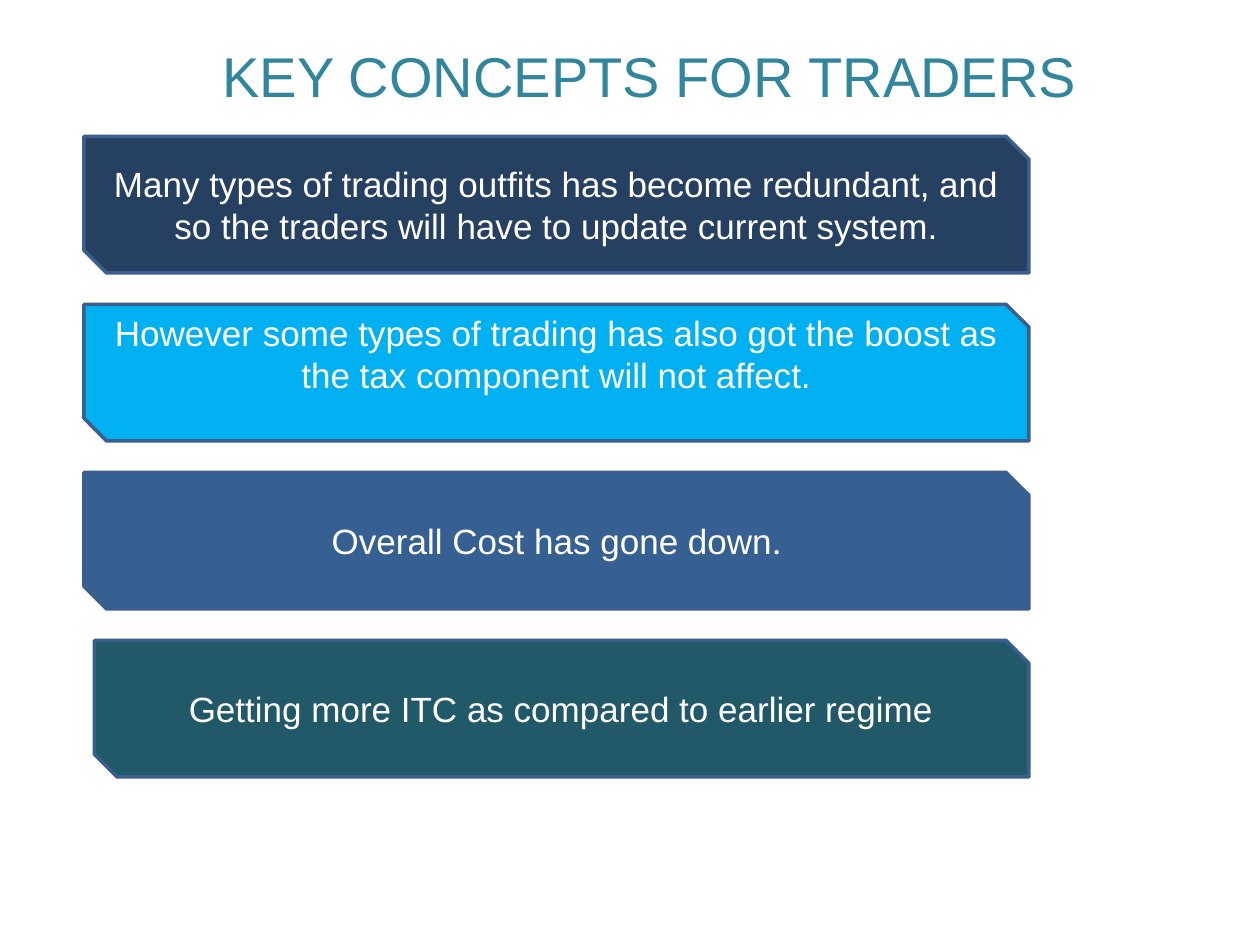
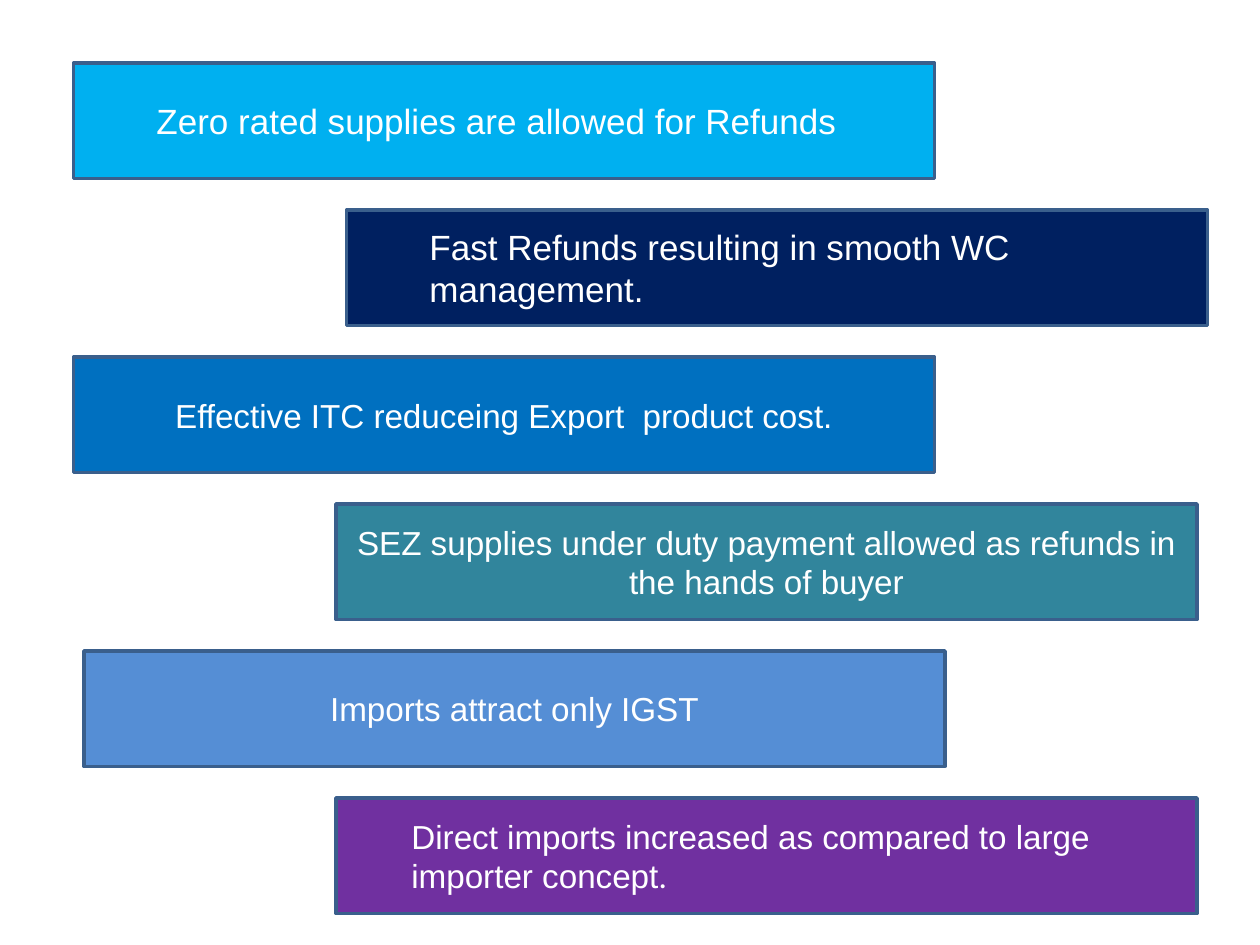
from pptx import Presentation
from pptx.dml.color import RGBColor as Rgb
from pptx.enum.shapes import MSO_SHAPE as Form
from pptx.enum.text import MSO_ANCHOR as Anchor, MSO_AUTO_SIZE as Fit, PP_ALIGN as Align
from pptx.util import Inches, Pt

HUES = {
    "white": "FFFFFF", "edge": "3A5F8C", "teal": "31859C",
    "dusk": "254061", "sky": "00B0F0", "steel": "376092", "pine": "215968",
    "navy": "002060", "blue": "0070C0", "pale": "558ED5", "plum": "7030A0",
}
COLS, ROWS = 120, 90


class Deck:
    """Holds the style and the current slide; lengths are grid cells."""

    def __init__(self):
        self.prs = Presentation()
        self.prs.slide_width, self.prs.slide_height = Inches(10), Inches(7.5)
        self.cell = self.prs.slide_width / COLS
        self.row = self.prs.slide_height / ROWS
        self.font = "Arial"

    def page(self):
        self.slide = self.prs.slides.add_slide(self.prs.slide_layouts[6])

    def place(self, left, top, wide, high):
        return (round(left * self.cell), round(top * self.row),
                round(wide * self.cell), round(high * self.row))

    def label(self, para, text, size, hue, dot=False):
        para.text = text
        if dot:
            para.add_run().text = "."
        for run in para.runs:
            run.font.name, run.font.size = self.font, Pt(size)
            run.font.color.rgb = Rgb.from_string(HUES[hue])
        if dot:
            para.runs[-1].font.name = "Calibri"

    def title(self, text, *spot):
        frame = self.slide.shapes.add_textbox(*self.place(*spot)).text_frame
        frame.word_wrap, frame.auto_size = True, Fit.SHAPE_TO_FIT_TEXT
        self.label(frame.paragraphs[0], text, 32, "teal")

    def bar(self, form, spot, hue, text, size=20, inset=None, lift=0, dot=False):
        """Draw a bar; inset (inches) left-aligns the text, lift raises it."""
        shape = self.slide.shapes.add_shape(form, *self.place(*spot))
        shape.shadow.inherit = False
        shape.fill.solid()
        shape.fill.fore_color.rgb = Rgb.from_string(HUES[hue])
        shape.line.color.rgb = Rgb.from_string(HUES["edge"])
        shape.line.width = Pt(2)
        frame = shape.text_frame
        frame.word_wrap, frame.vertical_anchor = True, Anchor.MIDDLE
        frame.margin_bottom = Inches(0.05 + lift)
        para = frame.paragraphs[0]
        self.label(para, text, size, "white", dot)
        if inset is None:
            para.alignment = Align.CENTER
        else:
            para.alignment = Align.LEFT
            props = para._p.get_or_add_pPr()
            props.set("marL", str(Inches(inset)))
            props.set("indent", "0")


def traders(deck):
    deck.page()
    deck.title("KEY CONCEPTS FOR TRADERS", 20, 3.36, 100, 7.68)
    # Left edge, colour, text, options; all bars end on the same column
    bars = [
        (8, "dusk", "Many types of trading outfits has become redundant, "
         "and so the traders will have to update current system.", {}),
        (8, "sky", "However some types of trading has also got the boost "
         "as the tax component will not affect.", {"lift": 0.31}),
        (8, "steel", "Overall Cost has gone down", {"dot": True}),
        (9, "pine", "Getting more ITC as compared to earlier regime", {"inset": 0.56}),
    ]
    end, first, step, high = 98, 13, 16, 13
    for i, (left, hue, text, opts) in enumerate(bars):
        spot = (left, first + i * step, end - left, high)
        deck.bar(Form.SNIP_2_DIAG_RECTANGLE, spot, hue, text, **opts)


def exports(deck):
    deck.page()
    # Bars of one size, staggered left and right
    bars = [
        (7, "sky", "Zero rated supplies are allowed for Refunds", 20, {"inset": 0.56}),
        (33, "navy", "Fast Refunds resulting in smooth WC management.", 20,
         {"inset": 0.56}),
        (7, "blue", "Effective ITC reduceing Export  product cost.", 19, {}),
        (32, "teal", "SEZ supplies under duty payment allowed as refunds "
         "in the hands of buyer", 19, {}),
        (8, "pale", "Imports attract only IGST", 19, {}),
        (32, "plum", "Direct imports increased as compared to large "
         "importer concept", 19, {"inset": 0.5, "dot": True}),
    ]
    first, step, wide, high = 6, 14, 82, 11
    for i, (left, hue, text, size, opts) in enumerate(bars):
        spot = (left, first + i * step, wide, high)
        deck.bar(Form.RECTANGLE, spot, hue, text, size, **opts)


def main():
    deck = Deck()
    traders(deck)
    exports(deck)
    deck.prs.save("out.pptx")


if __name__ == "__main__":
    main()
